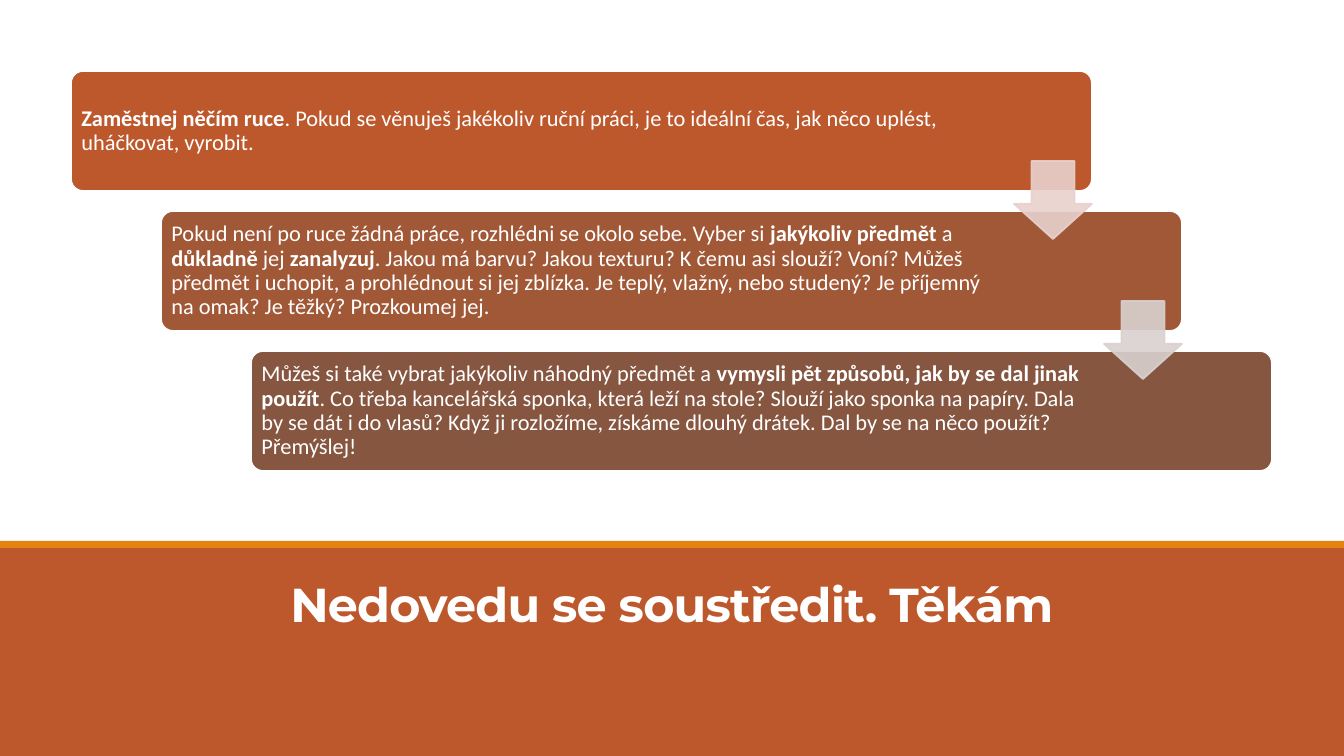
from lxml import etree
from pptx import Presentation
from pptx import util as u
from pptx.dml.color import RGBColor
from pptx.enum import shapes, text
from pptx.oxml.ns import qn

WIDTH, HEIGHT = 1344, 756
WHITE, RUST, ORANGE = "FFFFFF", "BD582C", "E48312"

# Each step: fill, right text margin, runs as (wording, bold)
STEPS = [
    (RUST, 129, [
        ("Zaměstnej něčím ruce", True),
        (". Pokud se věnuješ jakékoliv ruční práci, je to ideální čas, "
         "jak něco uplést, uháčkovat, vyrobit.", False),
    ]),
    ("A05837", 175, [
        ("Pokud není po ruce žádná práce, rozhlédni se okolo sebe. Vyber si ", False),
        ("jakýkoliv předmět", True),
        (" a ", False),
        ("důkladně", True),
        (" jej ", False),
        ("zanalyzuj", True),
        (". Jakou má barvu? Jakou texturu? K čemu asi slouží? Voní? "
         "Můžeš předmět i uchopit, a prohlédnout si jej zblízka. "
         "Je teplý, vlažný, nebo studený? Je příjemný na omak? "
         "Je těžký? Prozkoumej jej.", False),
    ]),
    ("865640", 175, [
        ("Můžeš si také vybrat jakýkoliv náhodný předmět a ", False),
        ("vymysli pět způsobů, jak by se dal jinak použít", True),
        (". Co třeba kancelářská sponka, která leží na stole? "
         "Slouží jako sponka na papíry. Dala by se dát i do vlasů? "
         "Když ji rozložíme, získáme dlouhý drátek. "
         "Dal by se na něco použít? Přemýšlej!", False),
    ]),
]
ARROW_COLOURS = ["E8D1CD", "D9D1CF"]


def px(length):
    return u.Emu(round(length * 12192000 / WIDTH))


def colour(value):
    return RGBColor.from_string(value)


def add_block(page, kind, box, fill, line=None):
    shape = page.shapes.add_shape(kind, *map(px, box))
    shape.shadow.inherit = False
    shape.fill.solid()
    shape.fill.fore_color.rgb = colour(fill)
    if line:
        shape.line.color.rgb = colour(line)
        shape.line.width = u.Pt(1.25)
    else:
        shape.line.fill.background()
    return shape


def add_span(para, wording, font, size, bold):
    span = para.add_run()
    span.text = wording
    span.font.name = font
    span.font.size = u.Pt(size)
    span.font.bold = bold
    span.font.color.rgb = colour(WHITE)
    return span


def add_step(page, box, fill, right_margin, runs):
    card = add_block(page, shapes.MSO_SHAPE.ROUNDED_RECTANGLE, box, fill, WHITE)
    card.adjustments[0] = 0.1
    frame = card.text_frame
    frame.word_wrap = True
    frame.vertical_anchor = text.MSO_ANCHOR.MIDDLE
    frame.margin_left = frame.margin_top = frame.margin_bottom = px(7)
    frame.margin_right = px(right_margin)
    para = frame.paragraphs[0]
    para.alignment = text.PP_ALIGN.LEFT
    para.line_spacing = 0.9
    for wording, bold in runs:
        add_span(para, wording, "Calibri", 16, bold)


def add_arrow(page, box, fill):
    """Add a slightly see-through down arrow."""
    arrow = add_block(page, shapes.MSO_SHAPE.DOWN_ARROW, box, fill, fill)
    arrow.adjustments[0] = 0.55
    arrow.adjustments[1] = 0.45
    for tint in arrow.element.spPr.iter(qn("a:srgbClr")):
        etree.SubElement(tint, qn("a:alpha")).set("val", "90000")


def add_staircase(page, box):
    """Place the steps diagonally in the box, with an arrow between neighbours."""
    left, top, width, height = box
    card_width, card_height, arrow_size = 1021, 120, 78
    gaps = len(STEPS) - 1
    step_x = (width - card_width) / gaps
    step_y = (height - card_height) / gaps
    for i, step in enumerate(STEPS):
        add_step(page, (left + i * step_x, top + i * step_y, card_width, card_height), *step)
    for i, fill in enumerate(ARROW_COLOURS):
        x = left + i * step_x + card_width - arrow_size
        y = top + i * step_y + 90
        add_arrow(page, (x, y, arrow_size, arrow_size), fill)


def add_title_band(page, box):
    left, top, width, height = box
    title = page.shapes.title
    for band_box, fill in [(box, RUST), ((left, top - 5, width, 7), ORANGE)]:
        band = add_block(page, shapes.MSO_SHAPE.RECTANGLE, band_box, fill)
        title.element.addprevious(band.element)
    title.left, title.top = px(left + 118), px(top + 33)
    title.width, title.height = px(width - 236), px(114)
    frame = title.text_frame
    frame.word_wrap = True
    frame.auto_size = text.MSO_AUTO_SIZE.NONE
    frame.vertical_anchor = text.MSO_ANCHOR.TOP
    para = frame.paragraphs[0]
    para.alignment = text.PP_ALIGN.CENTER
    para.line_spacing = 0.85
    span = add_span(para, "Nedovedu se soustředit. Těkám", "Montserrat", 34, True)
    span.font._element.set("spc", "-50")


def main():
    deck = Presentation()
    deck.slide_width, deck.slide_height = px(WIDTH), px(HEIGHT)
    page = deck.slides.add_slide(deck.slide_layouts[5])
    add_title_band(page, (0, 546, WIDTH, HEIGHT - 546))
    add_staircase(page, (71, 71, 1201, 400))
    deck.save("out.pptx")


if __name__ == "__main__":
    main()
